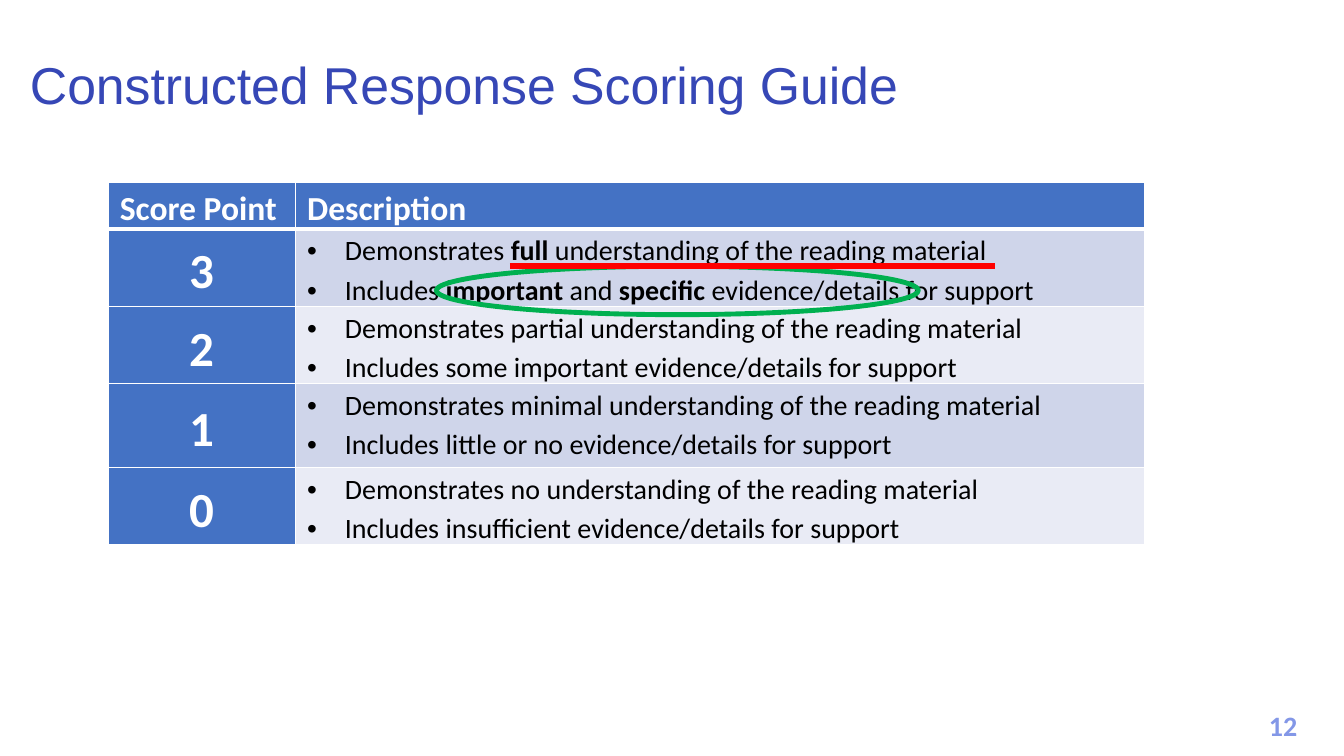
from dataclasses import dataclass

from lxml import etree
from pptx import Presentation
from pptx.dml.color import RGBColor
from pptx.enum.shapes import MSO_CONNECTOR, MSO_SHAPE
from pptx.enum.text import MSO_ANCHOR, MSO_AUTO_SIZE, PP_ALIGN
from pptx.oxml.ns import qn
from pptx.slide import Slide
from pptx.table import _Cell
from pptx.text.text import _Paragraph, _Run
from pptx.util import Cm, Pt

LEFT, CENTER = PP_ALIGN.LEFT, PP_ALIGN.CENTER
TOP, MIDDLE, BOTTOM = MSO_ANCHOR.TOP, MSO_ANCHOR.MIDDLE, MSO_ANCHOR.BOTTOM
ELLIPSE, STRAIGHT = MSO_SHAPE.OVAL, MSO_CONNECTOR.STRAIGHT
TITLE_ONLY = 5


@dataclass(frozen=True)
class Theme:
    title_font: str = "Arial"
    body_font: str = "Calibri"
    title_size: float = 37
    header_size: float = 24
    score_size: float = 35
    body_size: float = 20
    title: str = "3647B6"
    page_number: str = "8397E7"
    header_fill: str = "4472C4"
    bands: tuple[str, str] = ("CFD5EA", "E9EBF5")
    white: str = "FFFFFF"
    black: str = "000000"
    circle: str = "00B050"
    underline: str = "FF0000"


@dataclass(frozen=True)
class ScoreLevel:
    score: str
    height: float
    criteria: tuple[str, str]


THEME = Theme()
HEADINGS = ("Score Point", "Description")
HEADER_HEIGHT = 1.12
COLUMN_WIDTHS = (4.72, 21.41)
LEVELS = (
    ScoreLevel("3", 1.8, (
        "Demonstrates **full** understanding of the reading material",
        "Includes **important** and **specific** evidence/details for support")),
    ScoreLevel("2", 1.8, (
        "Demonstrates partial understanding of the reading material",
        "Includes some important evidence/details for support")),
    ScoreLevel("1", 2.11, (
        "Demonstrates minimal understanding of the reading material",
        "Includes little or no evidence/details for support")),
    ScoreLevel("0", 1.8, (
        "Demonstrates no understanding of the reading material",
        "Includes insufficient evidence/details for support")),
)


def style_span(span: _Run, size: float, color: str, bold: bool,
               font: str = THEME.body_font) -> None:
    span.font.name = font
    span.font.size = Pt(size)
    span.font.bold = bold
    span.font.color.rgb = RGBColor.from_string(color)


def add_borders(cell: _Cell, bottom: float) -> None:
    properties = cell._tc.get_or_add_tcPr()
    widths = {"a:lnL": 1, "a:lnR": 1, "a:lnT": 1, "a:lnB": bottom}
    for position, (side, width) in enumerate(widths.items()):
        border = etree.Element(qn(side), w=str(Pt(width)))
        fill = etree.SubElement(border, qn("a:solidFill"))
        etree.SubElement(fill, qn("a:srgbClr"), val=THEME.white)
        properties.insert(position, border)


def format_cell(cell: _Cell, fill: str, anchor: MSO_ANCHOR = TOP, bottom: float = 1) -> None:
    cell.margin_left = cell.margin_right = Cm(0.3)
    cell.margin_top = cell.margin_bottom = 0
    cell.vertical_anchor = anchor
    cell.fill.solid()
    cell.fill.fore_color.rgb = RGBColor.from_string(fill)
    add_borders(cell, bottom)


def fill_label(cell: _Cell, label: str, size: float, alignment: PP_ALIGN) -> None:
    cell.text_frame.text = label
    para = cell.text_frame.paragraphs[0]
    para.alignment = alignment
    para.line_spacing = 1.15
    style_span(para.runs[0], size, THEME.white, True)


def fill_criterion(para: _Paragraph, criterion: str) -> None:
    para.line_spacing = 1.15
    properties = para._p.get_or_add_pPr()
    properties.set("marL", str(Cm(0.95)))
    properties.set("indent", str(-Cm(0.95)))
    etree.SubElement(properties, qn("a:buFont"), typeface="Arial")
    etree.SubElement(properties, qn("a:buChar"), char="•")
    for index, part in enumerate(criterion.split("**")):
        span = para.add_run()
        span.text = part
        style_span(span, THEME.body_size, THEME.black, index % 2 == 1)


def add_title(page: Slide) -> None:
    title = page.shapes.title
    title.left, title.top, title.width, title.height = Cm(0.5), Cm(0.81), Cm(30.53), Cm(2.24)
    frame = title.text_frame
    frame.text = "Constructed Response Scoring Guide"
    frame.auto_size = MSO_AUTO_SIZE.NONE
    frame.vertical_anchor = BOTTOM
    para = frame.paragraphs[0]
    para.alignment = LEFT
    para.line_spacing = 0.9
    style_span(para.runs[0], THEME.title_size, THEME.title, False, THEME.title_font)


def add_scoring_table(page: Slide) -> None:
    heights = (HEADER_HEIGHT, *(level.height for level in LEVELS))
    table = page.shapes.add_table(
        len(heights), len(COLUMN_WIDTHS), Cm(2.72), Cm(4.6),
        Cm(sum(COLUMN_WIDTHS)), Cm(sum(heights))).table
    for column, width in zip(table.columns, COLUMN_WIDTHS):
        column.width = Cm(width)
    for row, height in zip(table.rows, heights):
        row.height = Cm(height)
    for column_index, heading in enumerate(HEADINGS):
        cell = table.cell(0, column_index)
        format_cell(cell, THEME.header_fill, bottom=3)
        fill_label(cell, heading, THEME.header_size, LEFT)
    for index, level in enumerate(LEVELS):
        score, description = table.cell(index + 1, 0), table.cell(index + 1, 1)
        format_cell(score, THEME.header_fill, MIDDLE)
        fill_label(score, level.score, THEME.score_size, CENTER)
        format_cell(description, THEME.bands[index % 2])
        frame = description.text_frame
        frame.text = "\n".join("" for _ in level.criteria)
        for para, criterion in zip(frame.paragraphs, level.criteria):
            fill_criterion(para, criterion)


def add_annotations(page: Slide) -> None:
    circle = page.shapes.add_shape(ELLIPSE, Cm(11), Cm(6.71), Cm(12.14), Cm(1.22))
    circle.shadow.inherit = False
    circle.fill.background()
    circle.line.color.rgb = RGBColor.from_string(THEME.circle)
    circle.line.width = Pt(3.5)
    underline = page.shapes.add_connector(STRAIGHT, Cm(12.85), Cm(6.71), Cm(25.07), Cm(6.71))
    underline.line.color.rgb = RGBColor.from_string(THEME.underline)
    underline.line.width = Pt(4.25)
    etree.SubElement(underline._element.spPr, qn("a:effectLst"))


def add_page_number(page: Slide) -> None:
    box = page.shapes.add_textbox(Cm(31.55), Cm(17.73), Cm(1.57), Cm(1.12))
    frame = box.text_frame
    frame.word_wrap = True
    frame.auto_size = MSO_AUTO_SIZE.SHAPE_TO_FIT_TEXT
    frame.text = "12"
    para = frame.paragraphs[0]
    para.alignment = CENTER
    style_span(para.runs[0], THEME.body_size, THEME.page_number, True)


def main() -> None:
    deck = Presentation()
    deck.slide_width, deck.slide_height = Cm(33.87), Cm(19.05)
    page = deck.slides.add_slide(deck.slide_layouts[TITLE_ONLY])
    add_page_number(page)
    add_scoring_table(page)
    add_annotations(page)
    add_title(page)
    deck.save("out.pptx")


if __name__ == "__main__":
    main()
